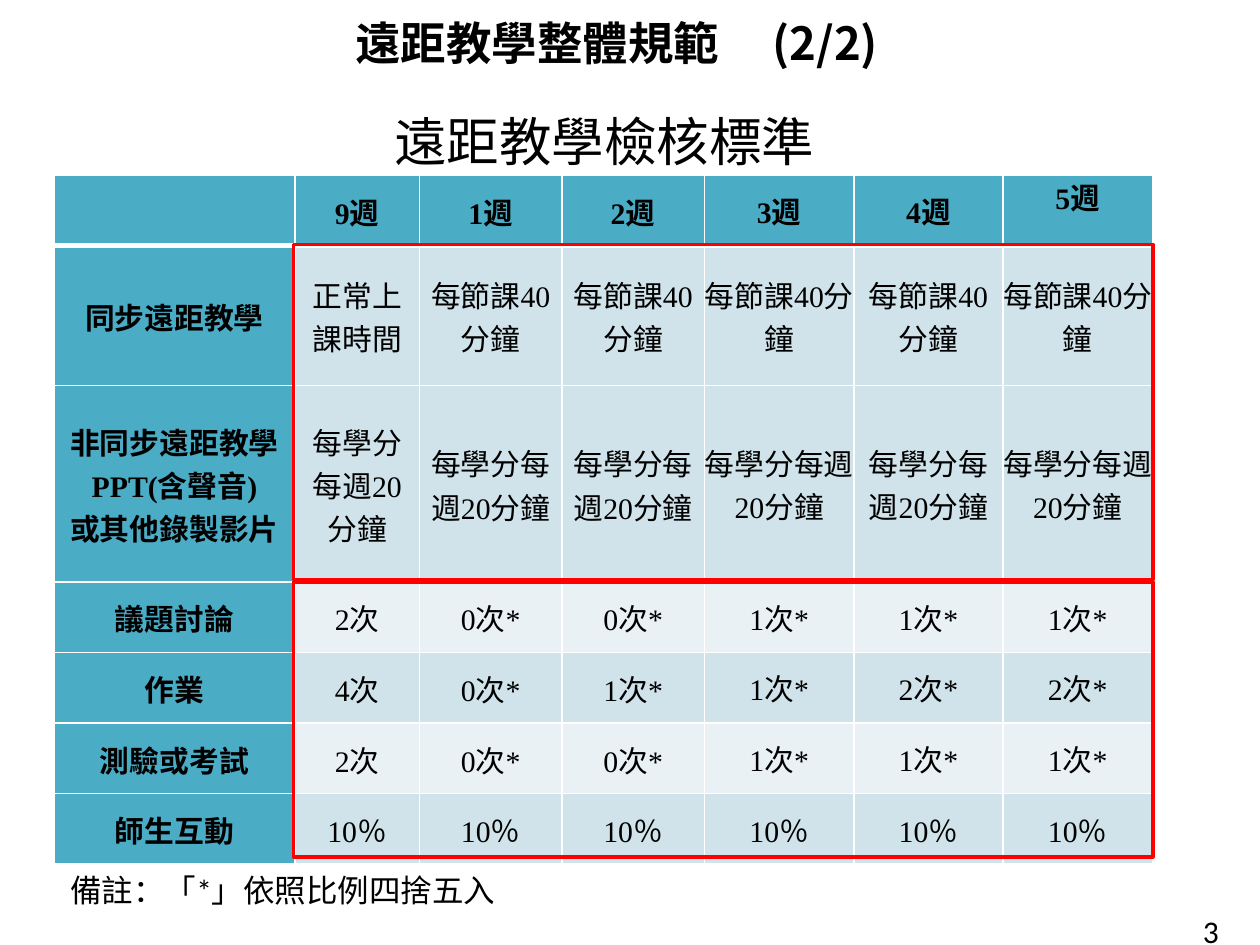
import lxml.etree
import pptx
import pptx.dml.color
import pptx.enum.shapes
import pptx.enum.text
import pptx.oxml.ns
import pptx.util

WIDTH, HEIGHT = 10, 7.5
COLORS = {
    "text": "000000",
    "header": "4BACC6",
    "band_dark": "D0E3EA",
    "band_light": "E9F1F5",
    "border": "FFFFFF",
    "frame": "FF0000",
}
SANS, SERIF, LATIN = "Noto Sans CJK SC", "Times New Roman", "Calibri"
ALIGN = pptx.enum.text.PP_ALIGN
ANCHOR = pptx.enum.text.MSO_ANCHOR

TABLE_LEFT, TABLE_TOP = 0.43, 1.39
COLUMNS = [1.91, 0.99, 1.13, 1.13, 1.19, 1.18, 1.19]
ROWS = [0.56, 1.11, 1.56] + [0.56] * 4
CRITERIA = [
    ["", "9週", "1週", "2週", "3週", "4週", "5週"],
    ["同步遠距教學", "正常上課時間"] + ["每節課40分鐘"] * 5,
    ["非同步遠距教學\nPPT(含聲音)\n或其他錄製影片"] + ["每學分每週20分鐘"] * 6,
    ["議題討論", "2次", "0次*", "0次*", "1次*", "1次*", "1次*"],
    ["作業", "4次", "0次*", "1次*", "1次*", "2次*", "2次*"],
    ["測驗或考試", "2次", "0次*", "0次*", "1次*", "1次*", "1次*"],
    ["師生互動"] + ["10％"] * 6,
]


def rgb(name):
    return pptx.dml.color.RGBColor.from_string(COLORS[name])


def place(part, left, top, width, height):
    part.left, part.top = pptx.util.Inches(left), pptx.util.Inches(top)
    part.width, part.height = pptx.util.Inches(width), pptx.util.Inches(height)


def write(paragraph, text, size, face, bold=False, align=ALIGN.CENTER):
    paragraph.alignment = align
    run = paragraph.add_run()
    run.text = text
    run.font.size = pptx.util.Pt(size)
    run.font.name = face
    run.font.bold = bold
    run.font.color.rgb = rgb("text")
    east_asian = pptx.oxml.ns.qn("a:ea")
    run.font._element.find(pptx.oxml.ns.qn("a:latin")).addnext(
        lxml.etree.Element(east_asian, typeface=SANS))


def add_title(slide, heading, part):
    title = slide.shapes.title
    place(title, 0.272 * WIDTH, 0.005 * HEIGHT, 0.728 * WIDTH, 0.08 * HEIGHT)
    frame = title.text_frame
    frame.auto_size = pptx.enum.text.MSO_AUTO_SIZE.NONE
    frame.vertical_anchor = ANCHOR.MIDDLE
    paragraph = frame.paragraphs[0]
    stops = lxml.etree.SubElement(paragraph._p.get_or_add_pPr(), pptx.oxml.ns.qn("a:tabLst"))
    lxml.etree.SubElement(stops, pptx.oxml.ns.qn("a:tab"),
                          pos=str(pptx.util.Inches(3.31)), algn="l")
    write(paragraph, f"{heading}\t{part}", 26, SANS, True, ALIGN.LEFT)


def add_label(slide, text, left, top, width, height, size, face, align):
    label = slide.shapes.add_textbox(0, 0, 0, 0)
    place(label, left * WIDTH, top * HEIGHT, width * WIDTH, height * HEIGHT)
    label.text_frame.word_wrap = True
    write(label.text_frame.paragraphs[0], text, size, face, align=align)


def set_borders(cell, top, bottom):
    properties = cell._tc.get_or_add_tcPr()
    widths = {"lnL": 1, "lnR": 1, "lnT": top, "lnB": bottom}
    for position, (side, points) in enumerate(widths.items()):
        line = lxml.etree.Element(pptx.oxml.ns.qn(f"a:{side}"), w=str(pptx.util.Pt(points)))
        fill = lxml.etree.SubElement(line, pptx.oxml.ns.qn("a:solidFill"))
        lxml.etree.SubElement(fill, pptx.oxml.ns.qn("a:srgbClr"), val=COLORS["border"])
        properties.insert(position, line)


def fill_cell(cell, text, row, column):
    is_header = row == 0 or column == 0
    band = "band_light" if row in (3, 5) else "band_dark"
    cell.fill.solid()
    cell.fill.fore_color.rgb = rgb("header" if is_header else band)
    set_borders(cell, 3 if row == 1 else 1, 3 if row == 0 else 1)
    is_wide = column >= 4
    cell.margin_left = cell.margin_right = pptx.util.Inches(0 if is_wide else 0.06)
    cell.margin_top = pptx.util.Inches(0 if is_wide else 0.01)
    cell.margin_bottom = 0
    is_last_week = row == 0 and column == len(COLUMNS) - 1
    cell.vertical_anchor = ANCHOR.TOP if is_last_week else ANCHOR.MIDDLE
    if not text:
        return
    for index, line in enumerate(text.split("\n")):
        frame = cell.text_frame
        paragraph = frame.add_paragraph() if index else frame.paragraphs[0]
        write(paragraph, line, 17, SERIF, is_header)


def add_criteria(slide):
    holder = slide.shapes.add_table(
        len(ROWS), len(COLUMNS), pptx.util.Inches(TABLE_LEFT), pptx.util.Inches(TABLE_TOP),
        pptx.util.Inches(sum(COLUMNS)), pptx.util.Inches(sum(ROWS)))
    criteria = holder.table
    for column, width in zip(criteria.columns, COLUMNS):
        column.width = pptx.util.Inches(width)
    for row, height in zip(criteria.rows, ROWS):
        row.height = pptx.util.Inches(height)
    for row, texts in enumerate(CRITERIA):
        for column, text in enumerate(texts):
            fill_cell(criteria.cell(row, column), text, row, column)


def add_highlight(slide, top, height):
    highlight = slide.shapes.add_shape(pptx.enum.shapes.MSO_SHAPE.RECTANGLE, 0, 0, 0, 0)
    place(highlight, TABLE_LEFT + COLUMNS[0] - 0.01, top, sum(COLUMNS[1:]) + 0.01, height)
    highlight.shadow.inherit = False
    highlight.fill.background()
    highlight.line.color.rgb = rgb("frame")
    highlight.line.width = pptx.util.Pt(2)


def main():
    deck = pptx.Presentation()
    deck.slide_width, deck.slide_height = pptx.util.Inches(WIDTH), pptx.util.Inches(HEIGHT)
    slide = deck.slides.add_slide(deck.slide_layouts.get_by_name("Title Only"))
    add_criteria(slide)
    add_title(slide, "遠距教學整體規範", "(2/2)")
    add_label(slide, "3", 0.914, 0.959, 0.094, 0.041, 18, LATIN, ALIGN.CENTER)
    add_label(slide, "遠距教學檢核標準", 0.107, 0.109, 0.745, 0.081, 30, SANS, ALIGN.CENTER)
    teaching_top = TABLE_TOP + ROWS[0] - 0.01
    activity_top = TABLE_TOP + sum(ROWS[:3])
    add_highlight(slide, teaching_top, sum(ROWS[1:3]) - 0.01)
    add_highlight(slide, activity_top, 2.18)
    add_label(slide, "備註：「*」依照比例四捨五入", 0.046, 0.915, 0.41, 0.053, 18, LATIN, ALIGN.LEFT)
    deck.save("out.pptx")


if __name__ == "__main__":
    main()
